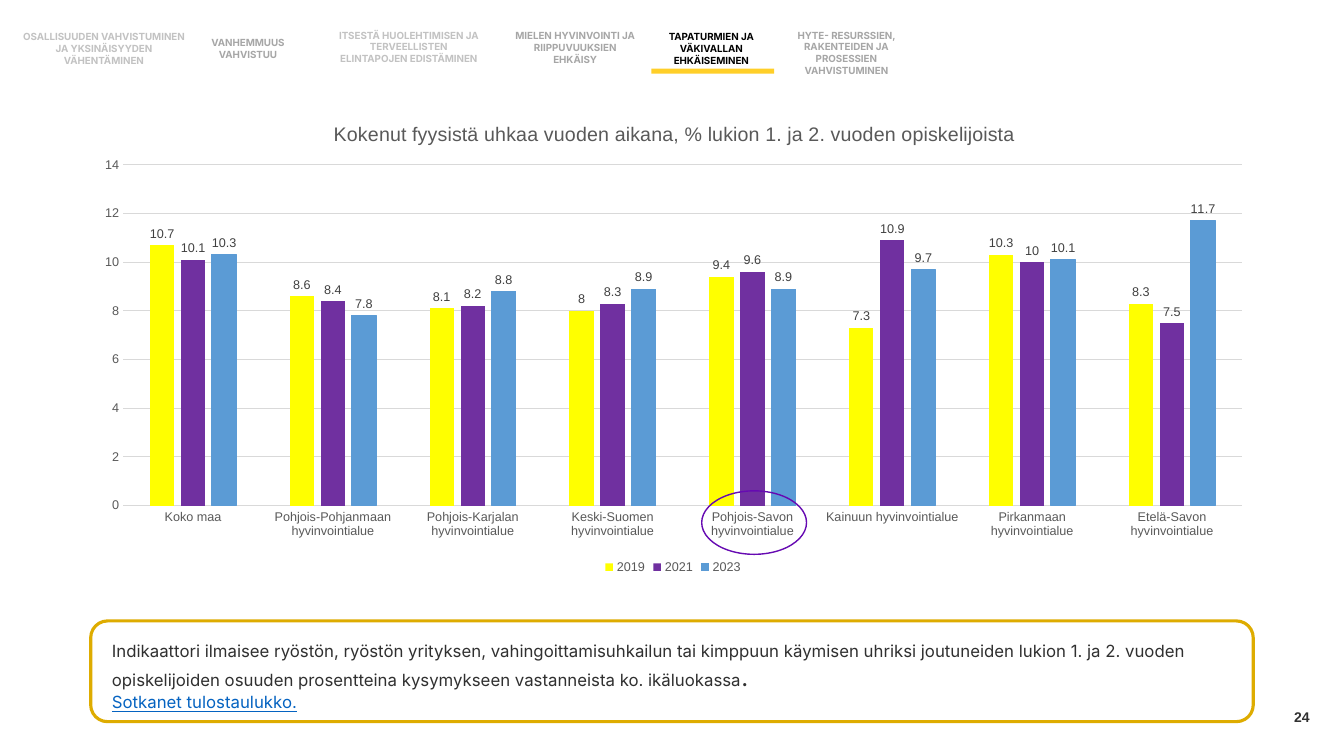
"""Builds the slide on physical threat experienced by upper secondary students."""
import lxml.etree
import pptx
import pptx.chart.data
import pptx.dml.color
import pptx.enum.chart
import pptx.enum.shapes
import pptx.enum.text
import pptx.oxml
import pptx.oxml.ns
import pptx.util

COLORS = {
    "page": "313131", "faint": "C2C2C2", "muted": "A6A6A6", "active": "000000",
    "marker": "FFCF29", "frame": "DEAC00", "body": "303030", "link": "0563C1",
    "axis": "595959", "grid": "D9D9D9", "label": "404040", "ring": "660AB2",
    "2019": "FFFF00", "2021": "7030A0", "2023": "5B9BD5",
}
SHAPES = pptx.enum.shapes.MSO_SHAPE
ALIGN = pptx.enum.text.PP_ALIGN
ANCHOR = pptx.enum.text.MSO_ANCHOR

NAVIGATION = [
    ("OSALLISUUDEN VAHVISTUMINEN JA YKSINÄISYYDEN VÄHENTÄMINEN", "faint", (1.58, 4.8, 12.3, 3.2)),
    ("VANHEMMUUS VAHVISTUU", "muted", (13.88, 5.6, 9.15, 1.6)),
    ("ITSESTÄ HUOLEHTIMISEN JA TERVEELLISTEN ELINTAPOJEN EDISTÄMINEN", "faint",
     (25.13, 3.87, 10.58, 4.67)),
    ("MIELEN HYVINVOINTI JA RIIPPUVUUKSIEN EHKÄISY", "muted", (38.03, 4.67, 9.53, 3.2)),
    ("TAPATURMIEN JA VÄKIVALLAN EHKÄISEMINEN", "active", (48.16, 4.8, 9.53, 3.2)),
    ("HYTE- RESURSSIEN, RAKENTEIDEN JA PROSESSIEN\nVAHVISTUMINEN", "muted",
     (57.69, 4.67, 10.58, 4.67)),
]
AREAS = ["Pohjois-Pohjanmaan", "Pohjois-Karjalan", "Keski-Suomen", "Pohjois-Savon",
         "Kainuun", "Pirkanmaan", "Etelä-Savon"]
SERIES = {
    "2019": (10.7, 8.6, 8.1, 8, 9.4, 7.3, 10.3, 8.3),
    "2021": (10.1, 8.4, 8.2, 8.3, 9.6, 10.9, 10, 7.5),
    "2023": (10.3, 7.8, 8.8, 8.9, 8.9, 9.7, 10.1, 11.7),
}
TITLE = "Kokenut fyysistä uhkaa vuoden aikana, % lukion 1. ja 2. vuoden opiskelijoista"
DESCRIPTION = (
    "Indikaattori ilmaisee ryöstön, ryöstön yrityksen, vahingoittamisuhkailun tai kimppuun "
    "käymisen uhriksi joutuneiden lukion 1. ja 2. vuoden opiskelijoiden osuuden prosentteina "
    "kysymykseen vastanneista ko. ikäluokassa"
)


class SlideBuilder:
    """Holds the style and the slide; boxes are percentages of the slide's size."""

    def __init__(self, presentation):
        self.width, self.height = presentation.slide_width, presentation.slide_height
        self.slide = presentation.slides.add_slide(presentation.slide_layouts[6])

    def place(self, box):
        """Turn a box of percentages into slide lengths."""
        sizes = (self.width, self.height) * 2
        return [int(size * share / 100) for size, share in zip(sizes, box)]

    def color(self, name):
        """Return a named colour."""
        return pptx.dml.color.RGBColor.from_string(COLORS[name])

    def style(self, font, size, color, name="Inter", bold=False):
        """Format a font."""
        font.name, font.size, font.bold = name, pptx.util.Pt(size), bold
        font.color.rgb = self.color(color)

    def text(self, content, box, size, color, align=ALIGN.LEFT, anchor=ANCHOR.TOP,
             name="Inter", bold=False):
        """Add a text box without margins and return its text frame."""
        frame = self.slide.shapes.add_textbox(*self.place(box)).text_frame
        frame.margin_left = frame.margin_right = frame.margin_top = frame.margin_bottom = 0
        frame.word_wrap, frame.vertical_anchor = True, anchor
        frame.text = content
        for paragraph in frame.paragraphs:
            paragraph.alignment = align
            for run in paragraph.runs:
                self.style(run.font, size, color, name, bold)
        return frame

    def shape(self, kind, box, fill=None, line=None, weight=1):
        """Add a preset shape."""
        shape = self.slide.shapes.add_shape(kind, *self.place(box))
        shape.shadow.inherit = False
        if fill:
            shape.fill.solid()
            shape.fill.fore_color.rgb = self.color(fill)
        else:
            shape.fill.background()
        if line:
            shape.line.color.rgb = self.color(line)
            shape.line.width = pptx.util.Pt(weight)
        else:
            shape.line.fill.background()

    def layout(self, parent, after, **values):
        """Fix the place of a chart part after a given child element."""
        qualify = pptx.oxml.ns.qn
        for old in parent.findall(qualify("c:layout")):
            parent.remove(old)
        layout = pptx.oxml.parse_xml(f"<c:layout {pptx.oxml.ns.nsdecls('c')}/>")
        manual = lxml.etree.SubElement(layout, qualify("c:manualLayout"))
        for tag, value in values.items():
            lxml.etree.SubElement(manual, qualify("c:" + tag)).set("val", str(value))
        parent.insert(0 if after is None else parent.index(after) + 1, layout)

    def column_chart(self, title, categories, series, box):
        """Add a clustered column chart."""
        data = pptx.chart.data.CategoryChartData()
        data.categories = categories
        for name, values in series.items():
            data.add_series(name, values)
        kind = pptx.enum.chart.XL_CHART_TYPE.COLUMN_CLUSTERED
        chart = self.slide.shapes.add_chart(kind, *self.place(box), data).chart
        self.style(chart.font, 10, "active", "Arial")

        chart.has_title = True
        chart.chart_title.text_frame.text = title
        heading = chart.chart_title.text_frame.paragraphs[0].runs[0]
        self.style(heading.font, 14, "axis", "Arial")
        chart.chart_title.include_in_layout = False
        chart.has_legend = True
        chart.legend.position = pptx.enum.chart.XL_LEGEND_POSITION.BOTTOM
        chart.legend.include_in_layout = False
        self.style(chart.legend.font, 9, "axis", "Arial")

        for axis in (chart.category_axis, chart.value_axis):
            axis.major_tick_mark = axis.minor_tick_mark = pptx.enum.chart.XL_TICK_MARK.NONE
            self.style(axis.tick_labels.font, 9, "axis", "Arial")
        chart.value_axis.minimum_scale, chart.value_axis.maximum_scale = 0, 14
        chart.value_axis.major_unit = 2
        chart.value_axis.format.line.fill.background()
        for line in (chart.category_axis.format.line, chart.value_axis.major_gridlines.format.line):
            line.color.rgb = self.color("grid")
            line.width = pptx.util.Pt(0.75)

        plot = chart.plots[0]
        plot.gap_width, plot.overlap, plot.vary_by_categories = 219, -27, False
        for columns in plot.series:
            columns.format.fill.solid()
            columns.format.fill.fore_color.rgb = self.color(columns.name)
            labels = columns.data_labels
            labels.show_value = True
            labels.position = pptx.enum.chart.XL_LABEL_POSITION.OUTSIDE_END
            self.style(labels.font, 9, "label", "Arial")
        outline = plot.series[-1].format.line
        outline.color.rgb = self.color("2023")
        outline.width = pptx.util.Pt(0.75)

        title_element = chart.chart_title._element
        self.layout(title_element, title_element.find(pptx.oxml.ns.qn("c:tx")),
                    xMode="edge", yMode="edge", x=0.21, y=0.04)
        self.layout(plot._element.getparent(), None, layoutTarget="inner", xMode="edge",
                    yMode="edge", x=0.035, y=0.138, w=0.946, h=0.71)


def main():
    """Build and save the presentation."""
    presentation = pptx.Presentation()
    presentation.slide_width = pptx.util.Inches(13.33)
    presentation.slide_height = pptx.util.Inches(7.5)
    builder = SlideBuilder(presentation)

    builder.text("24", (74.94, 92.13, 22.5, 5.33), 10, "page", ALIGN.RIGHT, ANCHOR.MIDDLE,
                 "Arial", True)
    for label, color, box in NAVIGATION:
        builder.text(label, box, 7, color, ALIGN.CENTER, ANCHOR.MIDDLE, bold=True)
    builder.shape(SHAPES.RECTANGLE, (48.46, 9.07, 9.15, 0.67), fill="marker")
    builder.shape(SHAPES.ROUNDED_RECTANGLE, (6.75, 82.13, 86.5, 13.33), line="frame", weight=2.25)

    frame = builder.text(DESCRIPTION + "\nSotkanet tulostaulukko.", (8.33, 84.8, 80.95, 9.47),
                         12, "body")
    description, source = frame.paragraphs
    full_stop = description.add_run()
    full_stop.text = "."
    builder.style(full_stop.font, 18, "body", "Lato")
    builder.style(source.runs[0].font, 12, "link")
    source.runs[0].font.underline = True

    categories = ["Koko maa"] + [f"{area} hyvinvointialue" for area in AREAS]
    builder.column_chart(TITLE, categories, SERIES, (6.08, 13.07, 88, 63.47))
    builder.shape(SHAPES.OVAL, (52.21, 64.93, 7.8, 8.4), line="ring")
    presentation.save("out.pptx")


if __name__ == "__main__":
    main()
